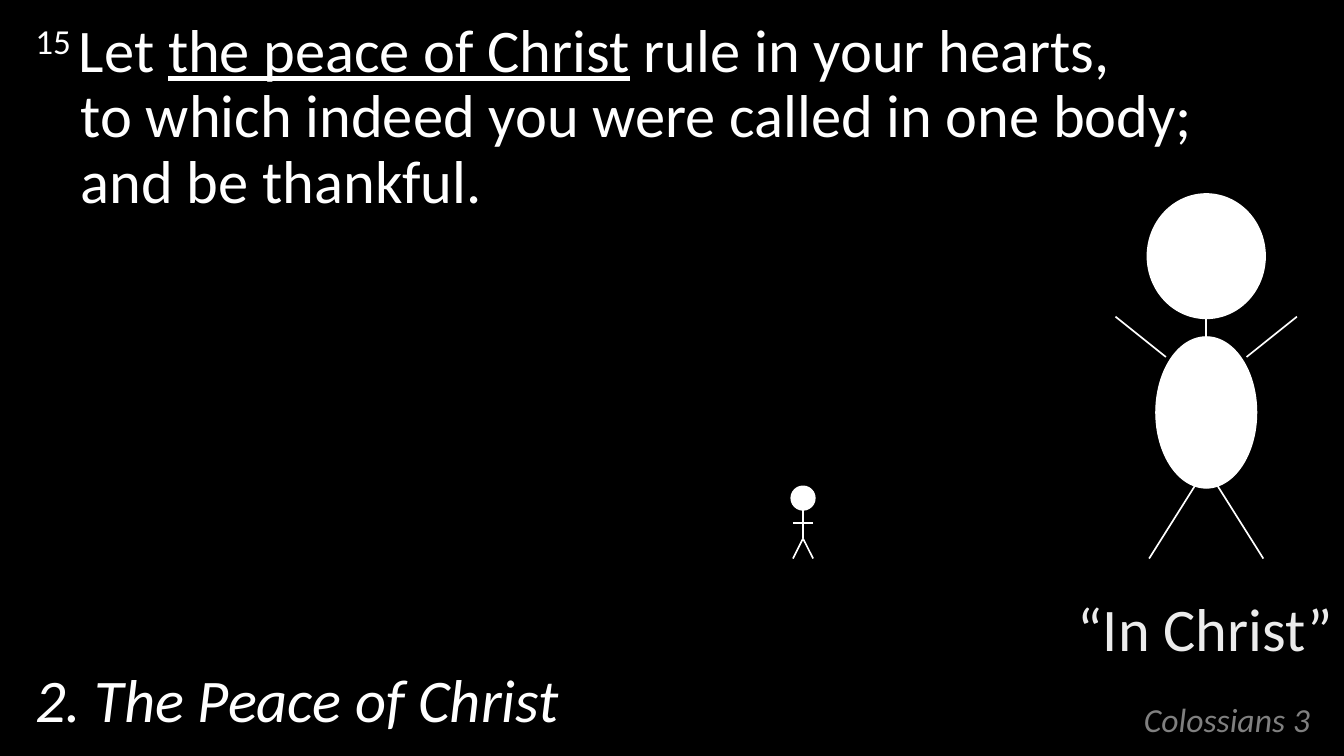
from lxml.etree import SubElement
from pptx import Presentation
from pptx.dml.color import RGBColor
from pptx.enum.shapes import MSO_CONNECTOR as Connector, MSO_SHAPE as Shape
from pptx.enum.text import MSO_ANCHOR as Anchor, MSO_AUTO_SIZE as AutoSize, PP_ALIGN as Align
from pptx.oxml.ns import qn
from pptx.util import Pt

WHITE = "FFFFFF"


def paint(color_format, hex_color):
    """Give a fill, line fill or font fill a solid colour."""
    color_format.solid()
    color_format.fore_color.rgb = RGBColor.from_string(hex_color)


def write(frame, lines, size=36, color=WHITE, italic=False, align=Align.LEFT,
          anchor=Anchor.TOP, spacing=1.0, indent=0):
    """Write lines of (text, underline, baseline) parts as one paragraph."""
    frame.word_wrap = True
    frame.auto_size = AutoSize.NONE
    frame.vertical_anchor = anchor
    paragraph = frame.paragraphs[0]
    paragraph.alignment = align
    paragraph.line_spacing = spacing
    paragraph.space_before = Pt(0)
    properties = paragraph._p.get_or_add_pPr()
    properties.set("marL", str(Pt(indent)))
    properties.set("indent", str(Pt(-indent)))
    for number, line in enumerate(lines):
        if number:
            paragraph.add_line_break()
        for text, underline, baseline in line:
            run = paragraph.add_run()
            run.text = text
            font = run.font
            font.name, font.size, font.italic = "Calibri", Pt(size), italic
            font.underline = underline
            paint(font.fill, color)
            if baseline:
                run._r.get_or_add_rPr().set("baseline", str(baseline * 1000))


def plain(text):
    """Return a single line made of one unformatted part."""
    return [[(text, False, 0)]]


def add_text(slide, left, top, width, height, lines, **style):
    """Add a text box with the given lines."""
    box = slide.shapes.add_textbox(Pt(left), Pt(top), Pt(width), Pt(height))
    write(box.text_frame, lines, **style)


def add_oval(group, center, top, width, height, outline):
    """Add a white oval centred on a vertical axis."""
    oval = group.shapes.add_shape(Shape.OVAL, Pt(center - width / 2), Pt(top),
                                  Pt(width), Pt(height))
    oval.shadow.inherit = False
    paint(oval.fill, WHITE)
    paint(oval.line.fill, WHITE)
    oval.line.width = Pt(outline)


def add_limb(group, x1, y1, x2, y2):
    """Add a thin white line."""
    limb = group.shapes.add_connector(Connector.STRAIGHT, Pt(x1), Pt(y1), Pt(x2), Pt(y2))
    paint(limb.line.fill, WHITE)
    limb.line.width = Pt(1)
    SubElement(limb._element.spPr, qn("a:effectLst"))


def add_figure(slide, center, head, hip, foot, arm, belly=None):
    """Add a stick figure that is symmetric about its centre."""
    group = slide.shapes.add_group_shape()
    head_top, head_width, head_height = head
    add_oval(group, center, head_top, head_width, head_height, 3)
    add_limb(group, center, head_top + head_height, center, hip)
    hand_reach, hand_y, shoulder_reach, shoulder_y = arm
    foot_reach, foot_y = foot
    for side in (1, -1):
        add_limb(group, center, hip, center + side * foot_reach, foot_y)
        add_limb(group, center + side * hand_reach, hand_y,
                 center + side * shoulder_reach, shoulder_y)
    if belly:
        add_oval(group, center, *belly, 0.75)


def main():
    """Build the slide and save it."""
    deck = Presentation()
    deck.slide_width, deck.slide_height = Pt(800), Pt(450)
    slide = deck.slides.add_slide(deck.slide_layouts[5])
    paint(slide.background.fill, "000000")

    reference = slide.shapes.title
    reference.left, reference.top = Pt(508.5), Pt(400.5)
    reference.width, reference.height = Pt(278.5), Pt(43)
    write(reference.text_frame, plain("Colossians 3"), size=20, color="808080", italic=True,
          align=Align.RIGHT, anchor=Anchor.BOTTOM, spacing=0.8)

    verse = [
        [("15 ", False, 30), ("Let ", False, 0), ("the peace of Christ", True, 0),
         (" rule in your hearts,", False, 0)],
        [("to which indeed you were called in one body; ", False, 0)],
        [("and be thankful.", False, 0)],
    ]
    add_text(slide, 14, 8.5, 773, 381, verse, spacing=0.9, indent=27)
    add_text(slide, 14, 399, 585, 43, plain("2. The Peace of Christ"), italic=True,
             anchor=Anchor.BOTTOM, spacing=0.95, indent=27)

    add_figure(slide, 478, head=(290.5, 12, 12), hip=320.5, foot=(6, 332.5),
               arm=(6, 311.5, 0, 311.5))
    add_figure(slide, 718, head=(116.5, 68, 72), hip=278.5, foot=(34, 332.5),
               arm=(54, 188.5, 24, 212.5), belly=(200.5, 60, 90))
    add_text(slide, 633.5, 348, 168, 51, plain("“In Christ”"), color="ECECEC",
             align=Align.CENTER, indent=27)

    deck.save("out.pptx")


if __name__ == "__main__":
    main()
